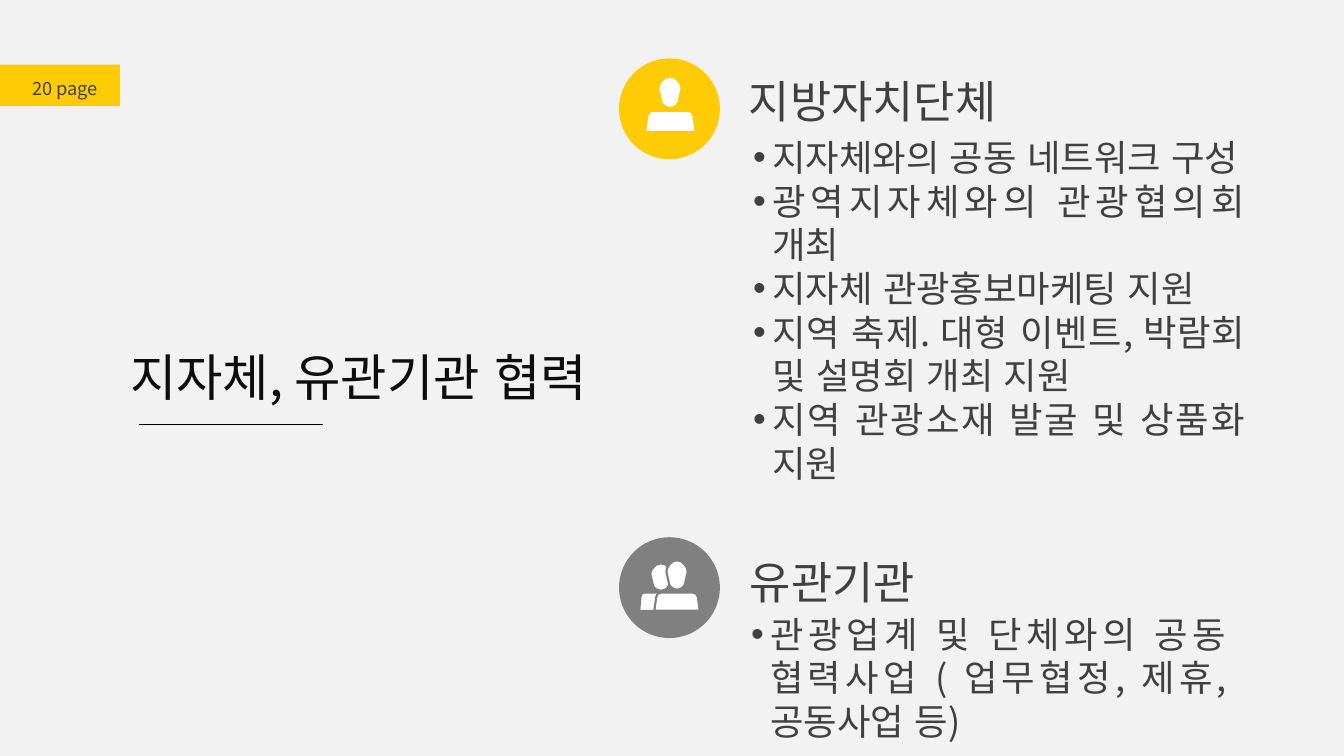
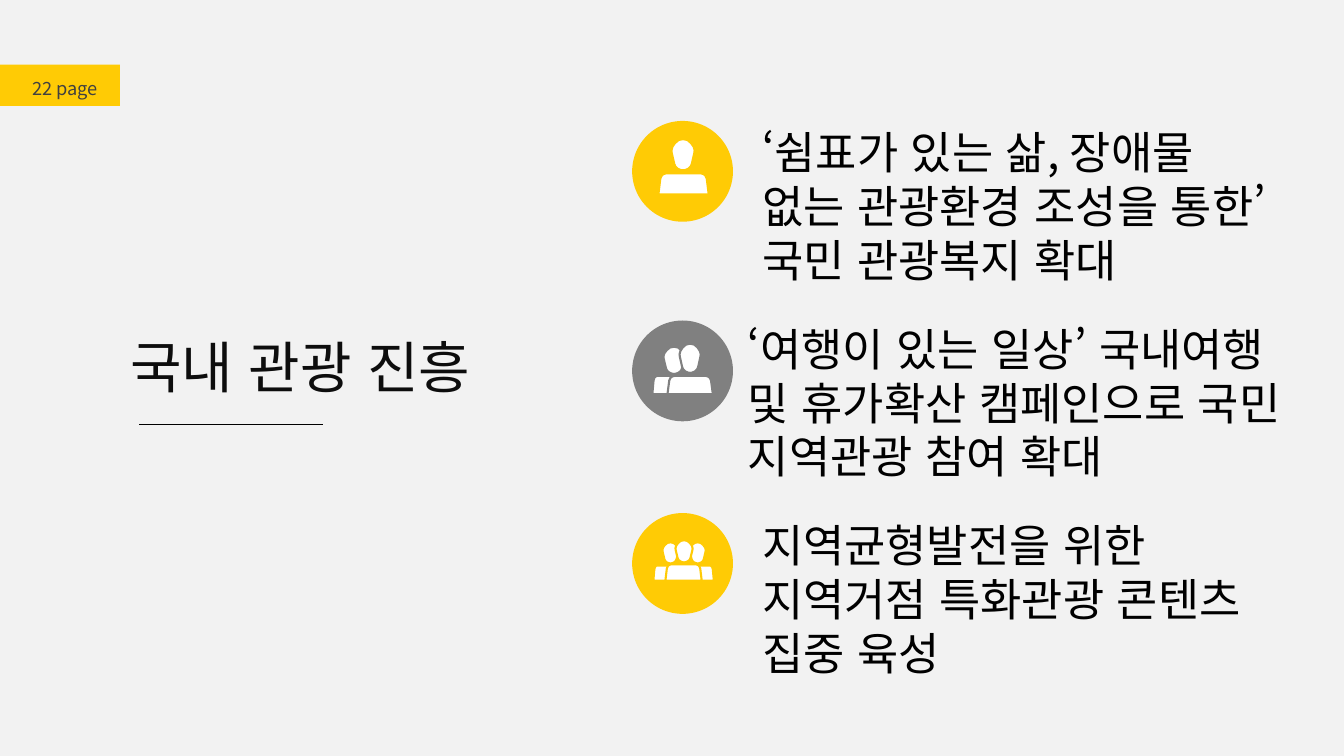
from dataclasses import dataclass

from lxml import etree
from pptx import Presentation
from pptx.dml.color import RGBColor
from pptx.enum.lang import MSO_LANGUAGE_ID
from pptx.enum.shapes import MSO_CONNECTOR, MSO_SHAPE
from pptx.enum.text import MSO_ANCHOR, MSO_AUTO_SIZE, PP_ALIGN
from pptx.oxml.ns import qn
from pptx.util import Inches, Pt

RECT, OVAL = MSO_SHAPE.RECTANGLE, MSO_SHAPE.OVAL
STRAIGHT = MSO_CONNECTOR.STRAIGHT
LEFT, JUSTIFY = PP_ALIGN.LEFT, PP_ALIGN.JUSTIFY
KOREAN = MSO_LANGUAGE_ID.KOREAN
TWO_CONTENT, TITLE_ONLY = 3, 5


@dataclass(frozen=True)
class Theme:
    font: str = "Noto Sans CJK KR"
    paper: str = "F2F2F2"
    yellow: str = "FFCB05"
    gray: str = "808080"
    white: str = "FFFFFF"
    black: str = "000000"
    ink: str = "0D0D0D"
    text: str = "404040"
    label_size: int = 13
    list_size: int = 26
    heading_size: int = 32
    leading: float = 1.2
    rule_width: float = 0.5
    gap_width: float = 1.5


THEME = Theme()
BADGE_SIZE = 1
LIST_INDENT = 0.19

# Right half of each outline: x from the middle (0 to 1), y from the top (0 to 1).
HEAD = [(0, 0), (0.38, 0.03), (0.7, 0.13), (0.92, 0.25), (1, 0.36), (0.97, 0.45),
        (0.76, 0.79), (0.66, 0.88), (0.45, 0.95), (0.2, 0.99), (0, 1)]
BODY = [(0, 0), (0.69, 0), (0.79, 0.03), (0.87, 0.11), (0.92, 0.25), (1, 1), (0, 1)]

# Figures from back to front: head box and body box, measured inside the badge.
ICONS = {
    "one": [((0.39, 0.18, 0.23, 0.31), (0.26, 0.52, 0.5, 0.21))],
    "two": [((0.31, 0.26, 0.21, 0.27), (0.2, 0.55, 0.3, 0.18)),
            ((0.47, 0.23, 0.21, 0.29), (0.35, 0.55, 0.45, 0.18))],
    "three": [((0.3, 0.29, 0.16, 0.21), (0.21, 0.52, 0.25, 0.15)),
              ((0.57, 0.29, 0.16, 0.21), (0.56, 0.52, 0.25, 0.15)),
              ((0.43, 0.27, 0.17, 0.22), (0.33, 0.51, 0.36, 0.16))],
}

COOPERATION = {
    "page": "20 page",
    "title": "지자체, 유관기관 협력",
    "title_box": (1.19, 3.38, 5.48, 0.71),
    "title_size": 36,
    "sections": [
        {"badge": ("one", THEME.yellow, 6.14, 0.58),
         "heading": "지방자치단체", "heading_box": (7.33, 0.68, 2.89, 0.64),
         "list_box": (7.37, 1.29, 5.08, 4.04),
         "items": ["지자체와의 공동 네트워크 구성",
                   "광역지자체와의 관광협의회 개최",
                   "지자체 관광홍보마케팅 지원",
                   "지역 축제. 대형 이벤트, 박람회 및 설명회 개최 지원",
                   "지역 관광소재 발굴 및 상품화 지원"]},
        {"badge": ("two", THEME.gray, 6.14, 5.33),
         "heading": "유관기관", "heading_box": (7.34, 5.45, 2, 0.64),
         "list_box": (7.35, 6.02, 4.92, 1.41),
         "items": ["관광업계 및 단체와의 공동 협력사업 ( 업무협정, 제휴, 공동사업 등)"]},
    ],
}

PROMOTION = {
    "page": "22 page",
    "title": "국내 관광 진흥",
    "title_box": (1.19, 3.25, 4.18, 0.77),
    "title_size": 40,
    "goals": [
        {"badge": ("one", THEME.yellow, 6.27, 1.2), "box": (7.46, 1.19, 5.29, 1.72),
         "text": "‘쉼표가 있는 삶, 장애물 없는 관광환경 조성을 통한’ 국민 관광복지 확대"},
        {"badge": ("two", THEME.gray, 6.27, 3.18), "box": (7.32, 3.14, 5.56, 1.72),
         "text": "‘여행이 있는 일상’ 국내여행 및 휴가확산 캠페인으로 국민 지역관광 참여 확대"},
        {"badge": ("three", THEME.yellow, 6.27, 5.09), "box": (7.46, 5.09, 5.06, 1.72),
         "text": "지역균형발전을 위한 지역거점 특화관광 콘텐츠 집중 육성"},
    ],
}


def rgb(color):
    return RGBColor.from_string(color)


def inches(values):
    return [Inches(value) for value in values]


def place(shape, box):
    shape.left, shape.top, shape.width, shape.height = inches(box)


def write(shape, *lines, size, color, align=LEFT, spacing=1, bullet=False, wrap=True):
    """Fill a shape with one paragraph per line, all in the same format."""
    frame = shape.text_frame
    frame.word_wrap = wrap
    frame.auto_size = MSO_AUTO_SIZE.NONE
    frame.vertical_anchor = MSO_ANCHOR.TOP
    for number, line in enumerate(lines):
        para = frame.add_paragraph() if number else frame.paragraphs[0]
        para.alignment = align
        para.space_before = para.space_after = Pt(0)
        para.line_spacing = Pt(round(size * THEME.leading * spacing, 1))
        if bullet:
            add_bullet(para)
        span = para.add_run()
        span.text = line
        span.font.name = THEME.font
        span.font.size = Pt(size)
        span.font.color.rgb = rgb(color)
        span.font.language_id = KOREAN
        latin = span.font._element.find(qn("a:latin"))
        latin.addnext(latin.makeelement(qn("a:ea"), {"typeface": THEME.font}))


def add_bullet(para):
    properties = para._p.get_or_add_pPr()
    properties.set("marL", str(Inches(LIST_INDENT)))
    properties.set("indent", str(-Inches(LIST_INDENT)))
    etree.SubElement(properties, qn("a:buChar"), char="•")


def add_text(slide, box, *lines, **style):
    shape = slide.shapes.add_textbox(*inches(box))
    write(shape, *lines, **style)


def add_plain_shape(slide, kind, box, color):
    shape = slide.shapes.add_shape(kind, *inches(box))
    shape.shadow.inherit = False
    shape.fill.solid()
    shape.fill.fore_color.rgb = rgb(color)
    shape.line.fill.background()
    return shape


def contour(half, box, left, top):
    """Mirror a half outline and fit it to a box inside the badge."""
    x, y, width, height = box
    full = half + [(-across, down) for across, down in reversed(half[1:-1])]
    return [(Inches(left + x + width * (1 + across) / 2), Inches(top + y + height * down))
            for across, down in full]


def add_badge(slide, icon, color, left, top):
    add_plain_shape(slide, OVAL, (left, top, BADGE_SIZE, BADGE_SIZE), color)
    for head_box, body_box in ICONS[icon]:
        head = contour(HEAD, head_box, left, top)
        body = contour(BODY, body_box, left, top)
        builder = slide.shapes.build_freeform(*head[0])
        builder.add_line_segments(head[1:], close=True)
        builder.move_to(*body[0])
        builder.add_line_segments(body[1:], close=True)
        figure = builder.convert_to_shape()
        figure.shadow.inherit = False
        figure.fill.solid()
        figure.fill.fore_color.rgb = rgb(THEME.white)
        figure.line.color.rgb = rgb(color)
        figure.line.width = Pt(THEME.gap_width)


def start_slide(deck, layout, content):
    """Add a slide with its page band, title and short rule."""
    slide = deck.slides.add_slide(deck.slide_layouts[layout])
    band = add_plain_shape(slide, RECT, (0, 0.64, 1.19, 0.41), THEME.yellow)
    frame = band.text_frame
    frame.margin_left, frame.margin_top, frame.margin_right = inches((0.32, 0.02, 0))
    write(band, content["page"], size=THEME.label_size, color=THEME.text, spacing=1.5)

    title = slide.shapes.title
    place(title, content["title_box"])
    write(title, content["title"], size=content["title_size"], color=THEME.ink)

    rule = slide.shapes.add_connector(STRAIGHT, *inches((1.38, 4.21, 3.2, 4.21)))
    rule.line.color.rgb = rgb(THEME.black)
    rule.line.width = Pt(THEME.rule_width)
    etree.SubElement(rule._element.spPr, qn("a:effectLst"))
    return slide


def add_cooperation(deck):
    slide = start_slide(deck, TWO_CONTENT, COOPERATION)
    for number, section in enumerate(COOPERATION["sections"], start=1):
        add_badge(slide, *section["badge"])
        add_text(slide, section["heading_box"], section["heading"],
                 size=THEME.heading_size, color=THEME.text, wrap=False)
        body = slide.placeholders[number]
        place(body, section["list_box"])
        write(body, *section["items"], size=THEME.list_size, color=THEME.text,
              align=JUSTIFY, bullet=True)


def add_promotion(deck):
    slide = start_slide(deck, TITLE_ONLY, PROMOTION)
    for goal in PROMOTION["goals"]:
        add_badge(slide, *goal["badge"])
        add_text(slide, goal["box"], goal["text"],
                 size=THEME.heading_size, color=THEME.black)


def main():
    deck = Presentation()
    deck.slide_width, deck.slide_height = inches((13.33, 7.5))
    paper = deck.slide_master.background.fill
    paper.solid()
    paper.fore_color.rgb = rgb(THEME.paper)
    add_cooperation(deck)
    add_promotion(deck)
    deck.save("out.pptx")


if __name__ == "__main__":
    main()
